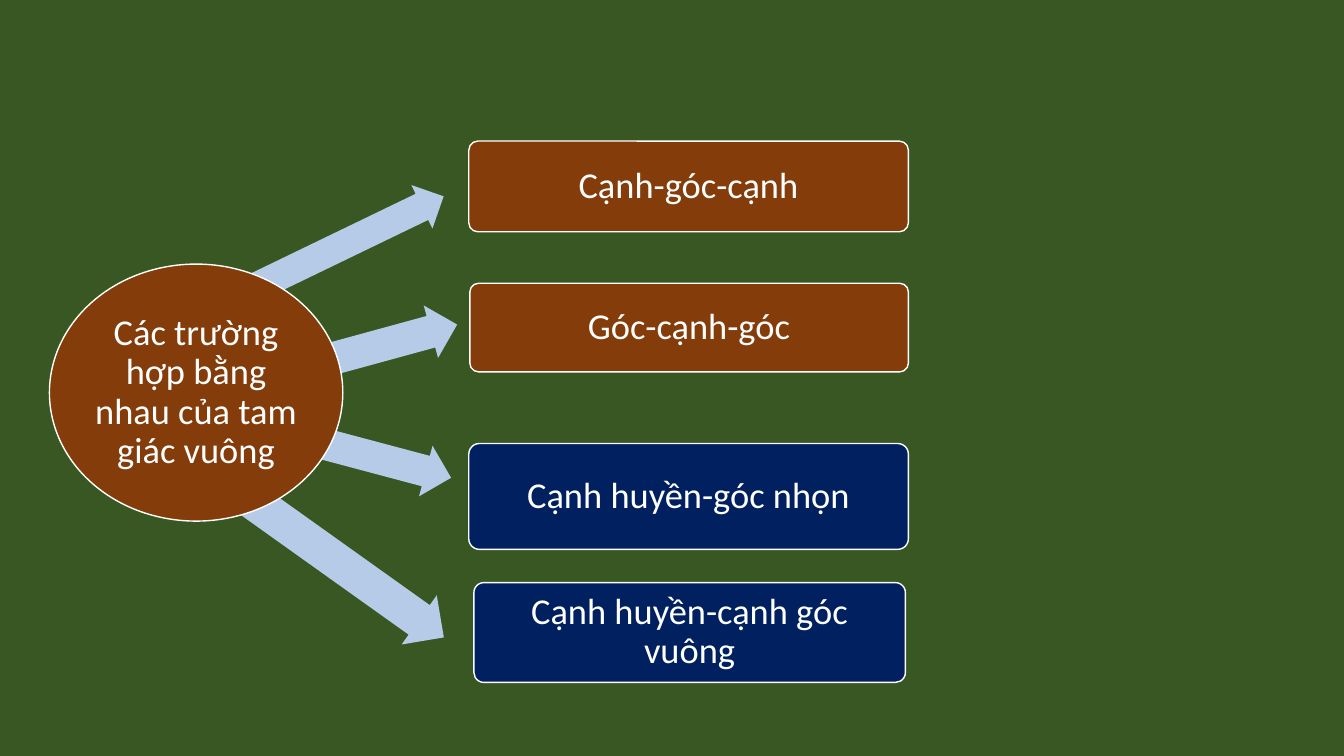
from dataclasses import dataclass

from pptx import Presentation
from pptx.dml.color import RGBColor
from pptx.enum.shapes import MSO_SHAPE
from pptx.enum.text import MSO_ANCHOR, PP_ALIGN
from pptx.util import Inches, Pt


@dataclass(frozen=True)
class Theme:
    background: str = "385723"
    brown: str = "843C0B"
    navy: str = "002060"
    arrow: str = "B5CBE7"
    white: str = "FFFFFF"
    font: str = "Calibri"
    size: float = 26
    line: float = 1


def rgb(value):
    return RGBColor.from_string(value)


def write(sp, text, *, font, size, color, inset, spacing=0.9):
    tf = sp.text_frame
    tf.word_wrap = True
    tf.vertical_anchor = MSO_ANCHOR.MIDDLE
    tf.margin_left = tf.margin_right = Inches(inset)
    tf.margin_top = tf.margin_bottom = Inches(inset)
    p = tf.paragraphs[0]
    p.alignment = PP_ALIGN.CENTER
    p.line_spacing = spacing
    r = p.add_run()
    r.text = text
    r.font.name = font
    r.font.size = Pt(size)
    r.font.color.rgb = rgb(color)


class Diagram:
    def __init__(self, slide, theme):
        self.slide = slide
        self.theme = theme
        fill = slide.background.fill
        fill.solid()
        fill.fore_color.rgb = rgb(theme.background)

    def shape(self, kind, at, color):
        sp = self.slide.shapes.add_shape(kind, *map(Inches, at))
        sp.shadow.inherit = False
        sp.fill.solid()
        sp.fill.fore_color.rgb = rgb(color)
        sp.line.fill.background()
        return sp

    def labelled(self, kind, at, color, text, inset):
        sp = self.shape(kind, at, color)
        t = self.theme
        sp.line.color.rgb = rgb(t.white)
        sp.line.width = Pt(t.line)
        write(sp, text, font=t.font, size=t.size, color=t.white, inset=inset)
        return sp

    def arrow(self, at, angle):
        sp = self.shape(MSO_SHAPE.LEFT_ARROW, at, self.theme.arrow)
        sp.adjustments[0] = 0.6
        sp.adjustments[1] = 0.5
        sp.rotation = angle

    def case(self, at, color, text):
        sp = self.labelled(MSO_SHAPE.ROUNDED_RECTANGLE, at, color, text, 0.06)
        sp.adjustments[0] = 0.1

    def hub(self, at, text):
        self.labelled(MSO_SHAPE.OVAL, at, self.theme.brown, text, 0)


def main():
    prs = Presentation()
    prs.slide_width, prs.slide_height = Inches(13.33), Inches(7.5)
    theme = Theme()
    diagram = Diagram(prs.slides.add_slide(prs.slide_layouts[6]), theme)

    branches = [
        ("Cạnh-góc-cạnh", theme.brown, (4.65, 1.4, 4.36, 0.9),
         (2.12, 2.23, 2.4, 0.48), 154.2),
        ("Góc-cạnh-góc", theme.brown, (4.66, 2.81, 4.35, 0.88),
         (2, 3.29, 2.58, 0.54), 164.7),
        ("Cạnh huyền-góc nhọn", theme.navy, (4.65, 4.4, 4.36, 1.05),
         (1.8, 4.13, 2.72, 0.52), 194.9),
        ("Cạnh huyền-cạnh góc vuông", theme.navy, (4.7, 5.78, 4.28, 0.99),
         (2.08, 5.28, 2.56, 0.6), 215.5),
    ]
    for text, color, box, arrow, angle in branches:
        diagram.arrow(arrow, angle)
        diagram.case(box, color, text)
    diagram.hub((0.49, 2.62, 2.91, 2.55),
                "Các trường hợp bằng nhau của tam giác vuông")

    prs.save("out.pptx")


if __name__ == "__main__":
    main()
